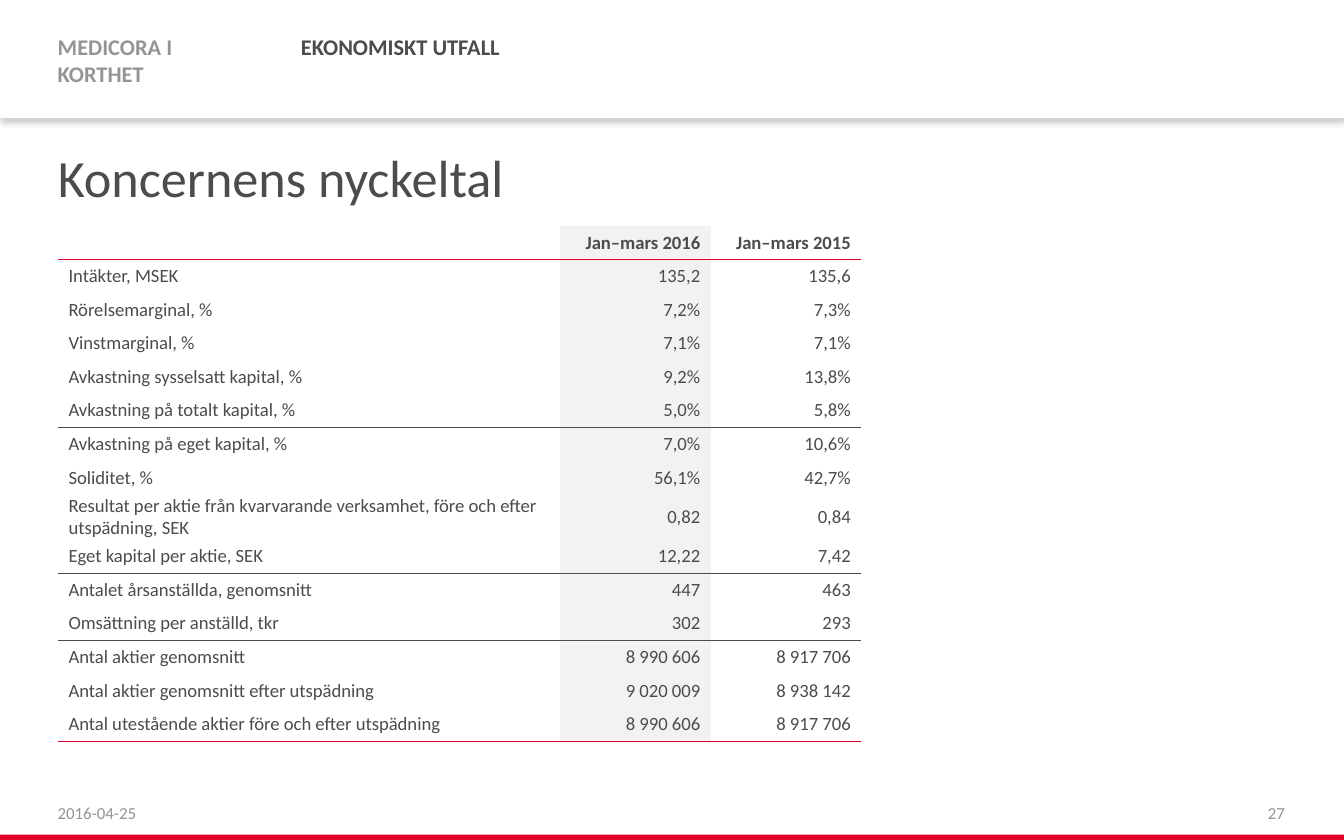
from dataclasses import dataclass

from lxml import etree
from pptx import Presentation
from pptx import util as u
from pptx.dml.color import RGBColor
from pptx.enum import shapes, text
from pptx.oxml import ns


@dataclass(frozen=True)
class Theme:
    """Colours, font and type sizes of the report."""
    font: str = "Calibri"
    white: str = "FFFFFF"
    red: str = "E00027"
    dark: str = "4C4C4C"
    muted: str = "949494"
    highlight: str = "F2F2F2"
    title: float = 28
    tag: float = 12
    table: float = 10
    footer: float = 9


HEADINGS = ("", "Jan–mars 2016", "Jan–mars 2015")
FIGURES = (
    ("Intäkter, MSEK", "135,2", "135,6"),
    ("Rörelsemarginal, %", "7,2%", "7,3%"),
    ("Vinstmarginal, %", "7,1%", "7,1%"),
    ("Avkastning sysselsatt kapital, %", "9,2%", "13,8%"),
    ("Avkastning på totalt kapital, %", "5,0%", "5,8%"),
    ("Avkastning på eget kapital, %", "7,0%", "10,6%"),
    ("Soliditet, %", "56,1%", "42,7%"),
    ("Resultat per aktie från kvarvarande verksamhet, före och efter utspädning, SEK", "0,82", "0,84"),
    ("Eget kapital per aktie, SEK", "12,22", "7,42"),
    ("Antalet årsanställda, genomsnitt", "447", "463"),
    ("Omsättning per anställd, tkr", "302", "293"),
    ("Antal aktier genomsnitt", "8 990 606", "8 917 706"),
    ("Antal aktier genomsnitt efter utspädning", "9 020 009", "8 938 142"),
    ("Antal utestående aktier före och efter utspädning", "8 990 606", "8 917 706"),
)


def inches(*lengths):
    """Turn numbers into inch lengths."""
    return [u.Inches(length) for length in lengths]


def write(frame, content, *, size, color, font, bold=False, align=text.PP_ALIGN.LEFT,
          anchor=text.MSO_ANCHOR.TOP, insets=(0, 0, 0, 0), wrap=True):
    """Write one formatted paragraph into a text frame."""
    frame.word_wrap = wrap
    frame.vertical_anchor = anchor
    (frame.margin_left, frame.margin_top,
     frame.margin_right, frame.margin_bottom) = inches(*insets)
    paragraph = frame.paragraphs[0]
    paragraph.alignment = align
    run = paragraph.add_run()
    run.text = content
    run.font.name, run.font.size, run.font.bold = font, u.Pt(size), bold
    run.font.color.rgb = RGBColor.from_string(color)


class ReportSlide:
    """Holds the theme and the current slide."""

    def __init__(self, presentation, theme):
        """Add a title-only slide."""
        self.theme = theme
        self.slide = presentation.slides.add_slide(presentation.slide_layouts[5])

    def bar(self, box, color, shadow=False):
        """Add a plain rectangle, optionally with a soft shadow below."""
        shape = self.slide.shapes.add_shape(shapes.MSO_SHAPE.RECTANGLE, *inches(*box))
        shape.shadow.inherit = False
        shape.fill.solid()
        shape.fill.fore_color.rgb = RGBColor.from_string(color)
        shape.line.fill.background()
        if shadow:
            effects = shape.element.spPr.find(ns.qn("a:effectLst"))
            outer = etree.SubElement(effects, ns.qn("a:outerShdw"), blurRad=str(u.Pt(3)),
                                     dist=str(u.Pt(2)), dir="5400000", rotWithShape="0")
            tone = etree.SubElement(outer, ns.qn("a:srgbClr"), val="000000")
            etree.SubElement(tone, ns.qn("a:alpha"), val="20000")

    def label(self, box, content, **style):
        """Add a text box."""
        shape = self.slide.shapes.add_textbox(*inches(*box))
        write(shape.text_frame, content, font=self.theme.font, **style)

    def title(self, box, content):
        """Place and fill the title placeholder."""
        shape = self.slide.shapes.title
        shape.left, shape.top, shape.width, shape.height = inches(*box)
        write(shape.text_frame, content, size=self.theme.title, color=self.theme.dark,
              font=self.theme.font, insets=(0, 0.2, 0, 0.12))

    def border(self, cell, side, rule):
        """Draw one cell edge, or clear it when there is no rule."""
        color, width = rule or (None, 0)
        line = etree.SubElement(cell._tc.get_or_add_tcPr(), ns.qn(f"a:ln{side}"), w=str(u.Pt(width)))
        if color:
            fill = etree.SubElement(line, ns.qn("a:solidFill"))
            etree.SubElement(fill, ns.qn("a:srgbClr"), val=color)
        else:
            etree.SubElement(line, ns.qn("a:noFill"))

    def cell(self, cell, content, heading, column, above, below):
        """Format and fill one table cell."""
        theme = self.theme
        for side, rule in (("L", None), ("R", None), ("T", above), ("B", below)):
            self.border(cell, side, rule)
        if column == 1:
            cell.fill.solid()
            cell.fill.fore_color.rgb = RGBColor.from_string(theme.highlight)
        else:
            cell.fill.background()
        cell.vertical_anchor = text.MSO_ANCHOR.BOTTOM if heading else text.MSO_ANCHOR.MIDDLE
        (cell.margin_left, cell.margin_top, cell.margin_right,
         cell.margin_bottom) = inches(0.08, 0, 0.08, 0.04 if heading else 0)
        paragraph = cell.text_frame.paragraphs[0]
        paragraph.alignment = text.PP_ALIGN.RIGHT if column else text.PP_ALIGN.LEFT
        paragraph.font.size = u.Pt(theme.table)
        if content:
            run = paragraph.add_run()
            run.text = content
            run.font.name, run.font.size, run.font.bold = theme.font, u.Pt(theme.table), heading
            run.font.color.rgb = RGBColor.from_string(theme.dark)

    def table(self, left, top, widths, heights, rows, rules):
        """Add a table with rules below the given rows."""
        frame = self.slide.shapes.add_table(
            len(rows), len(widths), *inches(left, top, sum(widths), sum(heights)))
        table = frame.table
        table.first_row = table.horz_banding = False
        for column, width in zip(table.columns, widths):
            column.width = u.Inches(width)
        for index, (row, height) in enumerate(zip(rows, heights)):
            table.rows[index].height = u.Inches(height)
            for column, content in enumerate(row):
                self.cell(table.cell(index, column), content, index == 0, column,
                          rules.get(index - 1), rules.get(index))


def main():
    """Build the key figures slide."""
    theme = Theme()
    presentation = Presentation()
    presentation.slide_width, presentation.slide_height = inches(10, 6.25)
    report = ReportSlide(presentation, theme)

    report.bar((0, 0, 10, 0.88), theme.white, shadow=True)
    report.bar((0, 6.21, 10, 0.04), theme.red)
    for left, width, content, color in (
            (0.35, 1.64, "MEDICORA I KORTHET", theme.muted),
            (2.16, 1.66, "EKONOMISKT UTFALL", theme.dark)):
        report.label((left, 0.18, width, 0.35), content, size=theme.tag, color=color,
                     bold=True, insets=(0.08, 0.07, 0.08, 0.07), wrap=False)

    report.title((0.43, 0.88, 9.14, 0.8), "Koncernens nyckeltal")

    rows = (HEADINGS, *FIGURES)
    heights = [0.29 if len(row[0]) > 60 else 0.25 for row in rows]
    rules = {0: (theme.red, 1), len(FIGURES): (theme.red, 0.5)}
    rules.update({row: (theme.dark, 0.5) for row in (5, 9, 11)})
    report.table(0.43, 1.68, (3.74, 1.12, 1.12), heights, rows, rules)

    for left, content, align in ((0.43, "2016-04-25", text.PP_ALIGN.LEFT),
                                 (7.23, "27", text.PP_ALIGN.RIGHT)):
        report.label((left, 5.89, 2.33, 0.31), content, size=theme.footer, color=theme.muted,
                     align=align, anchor=text.MSO_ANCHOR.BOTTOM, insets=(0, 0.08, 0, 0.08))

    presentation.save("out.pptx")


if __name__ == "__main__":
    main()
